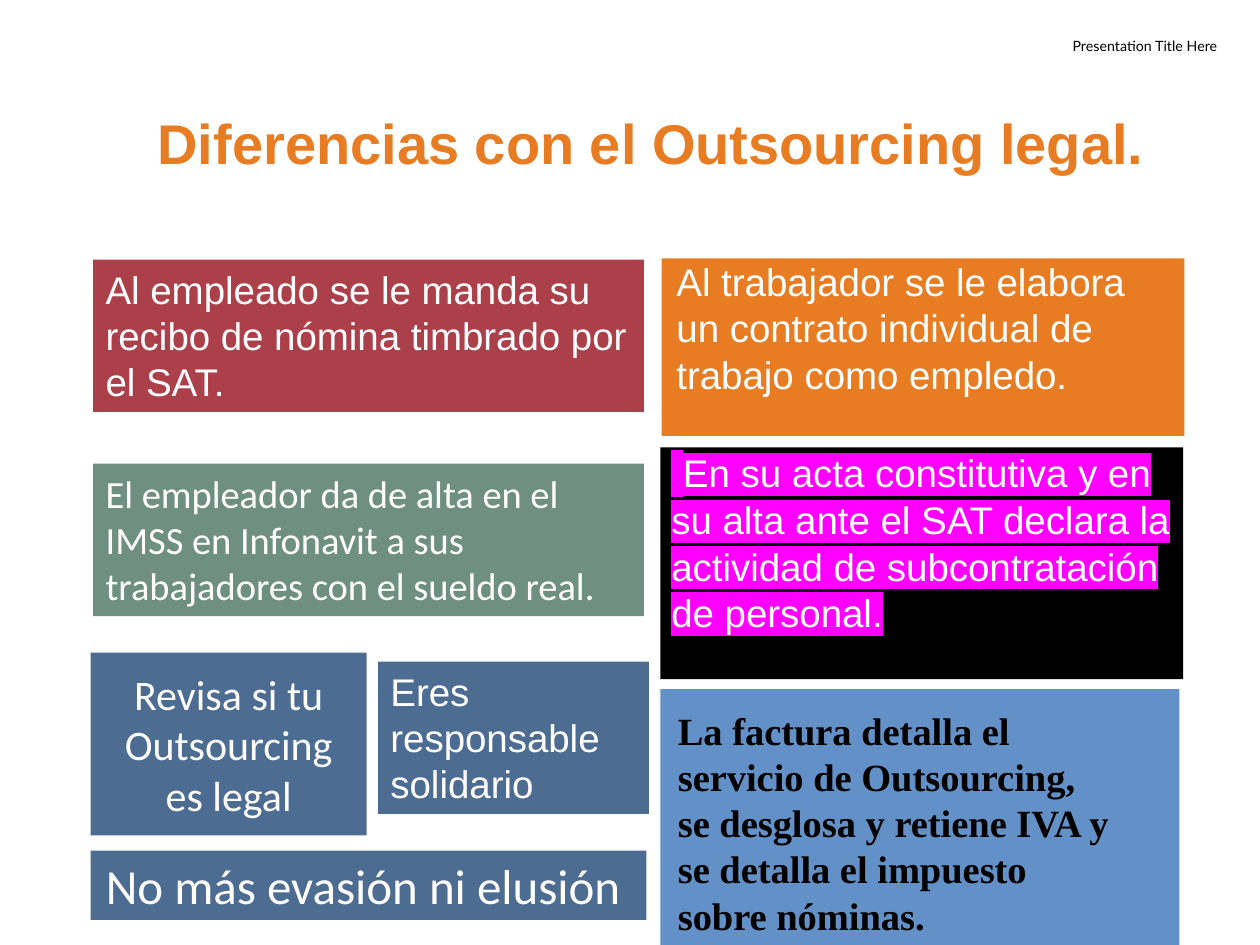
"""Build a slide on how legal outsourcing differs, as a set of coloured panels."""
from lxml.etree import SubElement
from pptx import Presentation
from pptx.dml.color import RGBColor
from pptx.enum.shapes import MSO_SHAPE as Shape
from pptx.enum.text import MSO_ANCHOR as Anchor, PP_ALIGN as Align
from pptx.oxml.ns import qn
from pptx.util import Inches, Pt

WHITE = RGBColor(0xFF, 0xFF, 0xFF)
BLACK = RGBColor(0x00, 0x00, 0x00)
ORANGE = RGBColor(0xE7, 0x7C, 0x22)
RED = RGBColor(0xAB, 0x40, 0x4B)
GREEN = RGBColor(0x6E, 0x8F, 0x82)
NAVY = RGBColor(0x4D, 0x6C, 0x91)
SKY = RGBColor(0x63, 0x90, 0xC6)
MAGENTA = RGBColor(0xFF, 0x00, 0xFF)

CENTERED = dict(font="Calibri", align=Align.CENTER, anchor=Anchor.MIDDLE)

PANELS = [
    ((5.24, 5.47, 4.12, 2.03), SKY, "", {}),
    ((5.25, 2.05, 4.15, 1.41), ORANGE, "", {}),
    ((5.24, 3.55, 4.15, 1.84), BLACK, "", {}),
    ((0.74, 3.68, 4.37, 1.21), GREEN,
     "El empleador da de alta en el IMSS en Infonavit a sus trabajadores con el sueldo real.",
     dict(font="Calibri")),
    ((0.74, 2.06, 4.37, 1.21), RED,
     "Al empleado se le manda su recibo de nómina timbrado por el SAT.", {}),
    ((0.72, 6.75, 4.41, 0.55), NAVY, "No más evasión ni elusión ", dict(CENTERED, size=28)),
    ((3, 5.25, 2.15, 1.21), NAVY, "Eres responsable solidario", {}),
    ((0.72, 5.18, 2.19, 1.45), NAVY, "Revisa si tu Outsourcing es legal",
     dict(CENTERED, size=24)),
]

LABELS = [
    ((3.89, 0.22, 5.87, 0.26), "Presentation Title Here",
     dict(font="Lato", size=14, color=BLACK, align=Align.RIGHT, baseline=30)),
    ((0.69, 0.81, 8.96, 0.56), "Diferencias con el Outsourcing legal.",
     dict(size=32, color=ORANGE, bold=True, align=Align.CENTER)),
    ((5.27, 2, 4.11, 1.21),
     "Al trabajador se le elabora un contrato individual de trabajo como empledo.", {}),
    ((5.23, 3.49, 4.16, 1.62),
     "En su acta constitutiva y en su alta ante el SAT declara la actividad de "
     "subcontratación de personal.",
     dict(lead=" ", lead_size=24, highlight=MAGENTA)),
    ((5.38, 5.61, 3.43, 2.15),
     "La factura detalla el servicio de Outsourcing, se desglosa y retiene IVA y "
     "se detalla el impuesto sobre nóminas.",
     dict(font="Times New Roman", color=BLACK, bold=True, inset=0)),
]


def write(box, text, font="Arial", size=22, color=WHITE, bold=False, align=Align.LEFT,
          anchor=Anchor.TOP, inset=None, baseline=None, highlight=None, lead="", lead_size=None):
    frame = box.text_frame
    frame.word_wrap = True
    frame.vertical_anchor = anchor
    if inset is not None:
        frame.margin_left = frame.margin_right = Inches(inset)
        frame.margin_top = frame.margin_bottom = Inches(inset)
    para = frame.paragraphs[0]
    para.alignment = align
    for words, points in ((lead, lead_size), (text, size)):
        if not words:
            continue
        span = para.add_run()
        span.text = words
        span.font.name = font
        span.font.size = Pt(points)
        span.font.bold = bold
        span.font.color.rgb = color
        properties = span.font._element
        if baseline:
            properties.set("baseline", str(baseline * 1000))
        if highlight is not None:
            marker = SubElement(properties, qn("a:highlight"))
            SubElement(marker, qn("a:srgbClr"), val=str(highlight))
            properties.find(qn("a:solidFill")).addnext(marker)


def build():
    deck = Presentation()
    deck.slide_width, deck.slide_height = Inches(10), Inches(7.5)
    page = deck.slides.add_slide(deck.slide_layouts[6])
    for place, fill, text, style in PANELS:
        box = page.shapes.add_shape(Shape.RECTANGLE, *map(Inches, place))
        box.shadow.inherit = False
        box.fill.solid()
        box.fill.fore_color.rgb = fill
        box.line.fill.background()
        if text:
            write(box, text, **style)
    for place, text, style in LABELS:
        write(page.shapes.add_textbox(*map(Inches, place)), text, **style)
    deck.save("out.pptx")


if __name__ == "__main__":
    build()
